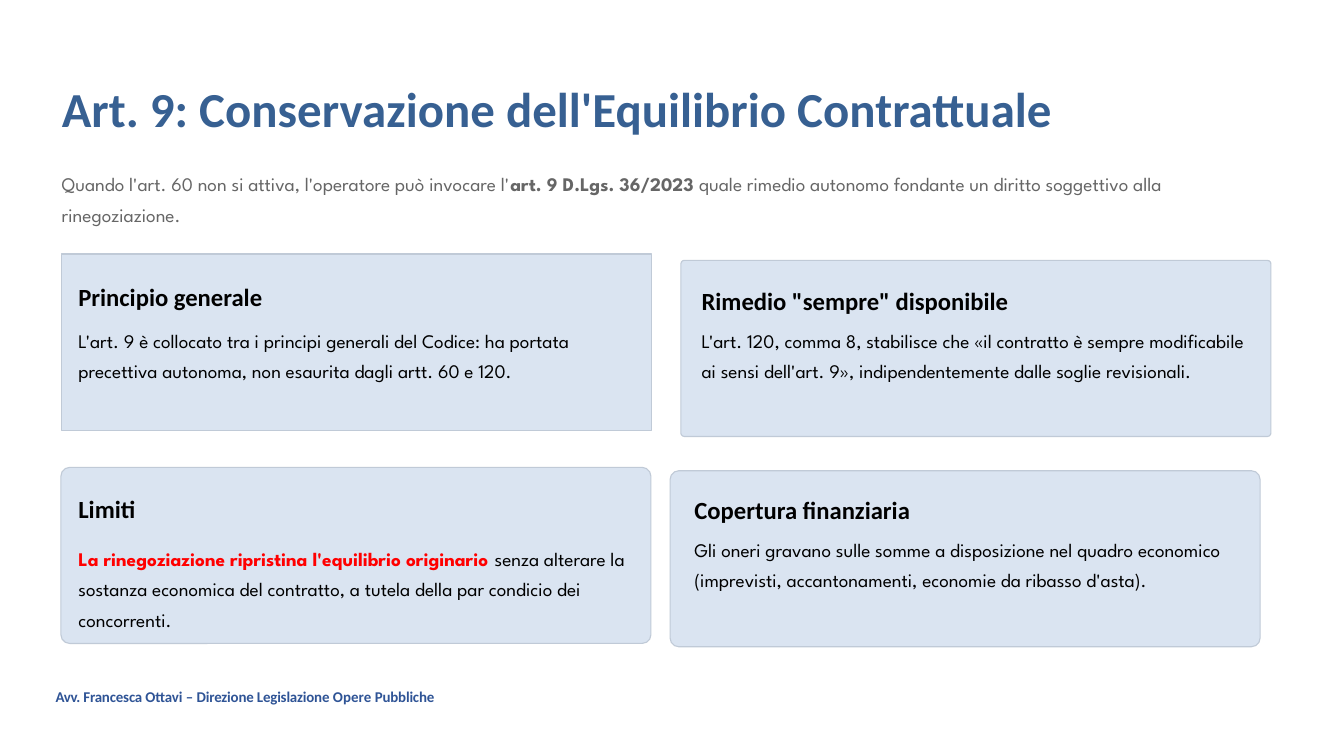
from dataclasses import dataclass
from typing import Optional

from pptx import Presentation
from pptx import util as u
from pptx.dml.color import RGBColor
from pptx.enum import shapes, text


@dataclass(frozen=True)
class Style:
    font: str
    size: float
    color: str
    bold: bool = False
    leading: Optional[float] = None


@dataclass(frozen=True)
class Theme:
    title: Style = Style("Calibri", 26.25, "376092", True, 33.1)
    intro: Style = Style("League Spartan", 10.3, "666666", False, 16.2)
    heading: Style = Style("Calibri", 13.15, "000000", True, 16.6)
    body: Style = Style("League Spartan", 10.3, "000000", False, 16.2)
    footer: Style = Style("Calibri", 8, "2F5496", True)
    card_fill: str = "DAE4F1"
    card_line: str = "C0CAD7"
    alert: str = "FF0000"


@dataclass(frozen=True)
class Run:
    text: str
    bold: Optional[bool] = None
    color: Optional[str] = None
    tracking: int = 0  # hundredths of a point


@dataclass(frozen=True)
class Box:
    """Left, top, width and height as percentages of the slide."""
    x: float
    y: float
    w: float
    h: float

    def emu(self) -> tuple[int, ...]:
        return tuple(int(side * share / 100) for side, share in
                     zip((WIDTH, HEIGHT) * 2, (self.x, self.y, self.w, self.h)))


@dataclass(frozen=True)
class Card:
    x: float
    y: float
    radius: float
    heading: str
    heading_box: Box
    body: tuple[Run, ...]
    body_box: Box


WIDTH = u.Inches(10)
HEIGHT = u.Emu(WIDTH * 9 // 16)
CARD_W, CARD_H = 43.9, 23.29
THEME = Theme()

CARDS = (
    Card(4.6, 33.6, 0, "Principio generale", Box(5.83, 37.05, 19.5, 9.6),
         (Run("L'art. 9 è collocato tra i principi generali del Codice: ha portata "
              "precettiva autonoma, non esaurita dagli artt. 60 e 120."),),
         Box(5.83, 42.56, 41.9, 13.69)),
    Card(50.66, 34.45, 0.02, 'Rimedio "sempre" disponibile', Box(52.2, 37.69, 26.8, 9.07),
         (Run("L'art. 120, comma 8, stabilisce che «il contratto è sempre modificabile "
              "ai sensi dell'art. 9», indipendentemente dalle soglie revisionali."),),
         Box(52.2, 42.56, 40.8, 17.78)),
    Card(4.53, 61.83, 0.05, "Limiti", Box(5.83, 65.14, 19.5, 7.29),
         (Run("La rinegoziazione ripristina l'equilibrio originario ", True, THEME.alert),
          Run("senza alterare la sostanza economica del contratto, a tutela della "
              "par condicio dei concorrenti.")),
         Box(5.83, 71.47, 41.9, 14.76)),
    Card(49.86, 62.27, 0.05, "Copertura finanziaria", Box(51.67, 65.24, 19.7, 7.11),
         (Run("Gli oneri gravano sulle somme a disposizione nel quadro economico "
              "(imprevisti, accantonamenti, economie da ribasso d'asta)."),),
         Box(51.67, 70.22, 41.4, 16)),
)


def add_text(s, box: Box, runs: tuple[Run, ...], style: Style, wrap: bool = True):
    sp = s.shapes.add_textbox(*box.emu())
    tf = sp.text_frame
    tf.word_wrap = wrap
    tf.auto_size = text.MSO_AUTO_SIZE.NONE
    tf.margin_left = tf.margin_top = tf.margin_right = tf.margin_bottom = 0
    p = tf.paragraphs[0]
    if style.leading:
        p.line_spacing = u.Pt(style.leading)
    for run in runs:
        r = p.add_run()
        r.text = run.text
        r.font.name = style.font
        r.font.size = u.Pt(style.size)
        r.font.bold = style.bold if run.bold is None else run.bold
        r.font.color.rgb = RGBColor.from_string(run.color or style.color)
        if run.tracking:
            r.font._element.set("spc", str(run.tracking))
    return sp


def add_card(s, card: Card) -> None:
    sp = s.shapes.add_shape(shapes.MSO_SHAPE.ROUNDED_RECTANGLE,
                            *Box(card.x, card.y, CARD_W, CARD_H).emu())
    sp.adjustments[0] = card.radius
    sp.shadow.inherit = False
    sp.fill.solid()
    sp.fill.fore_color.rgb = RGBColor.from_string(THEME.card_fill)
    sp.line.color.rgb = RGBColor.from_string(THEME.card_line)
    sp.line.width = u.Pt(0.6)
    add_text(s, card.heading_box, (Run(card.heading),), THEME.heading, wrap=False)
    add_text(s, card.body_box, card.body, THEME.body)


def main() -> None:
    prs = Presentation()
    prs.slide_width, prs.slide_height = WIDTH, HEIGHT
    s = prs.slides.add_slide(prs.slide_layouts[6])

    # Footer
    sp = add_text(s, Box(4.03, 90.84, 29.2, 2.84), (
        Run("Avv. ", tracking=-20),
        Run("Francesca Ottavi ", tracking=-10),
        Run("– "),
        Run("Direzione Legislazione ", tracking=-10),
        Run("Opere "),
        Run("Pubbliche", tracking=-10),
    ), THEME.footer)
    sp.text_frame.margin_left = sp.text_frame.margin_top = u.Inches(0.01)

    # Title and introduction
    add_text(s, Box(4.6, 9.96, 89.1, 15.11),
             (Run("Art. 9: Conservazione dell'Equilibrio Contrattuale"),),
             THEME.title, wrap=False)
    add_text(s, Box(4.6, 21.9, 90, 15.11), (
        Run("Quando l'art. 60 non si attiva, l'operatore può invocare l'"),
        Run("art. 9 D.Lgs. 36/2023", True),
        Run(" quale rimedio autonomo fondante un diritto soggettivo alla rinegoziazione."),
    ), THEME.intro)

    # Four cards
    for card in CARDS:
        add_card(s, card)

    prs.save("out.pptx")


if __name__ == "__main__":
    main()
